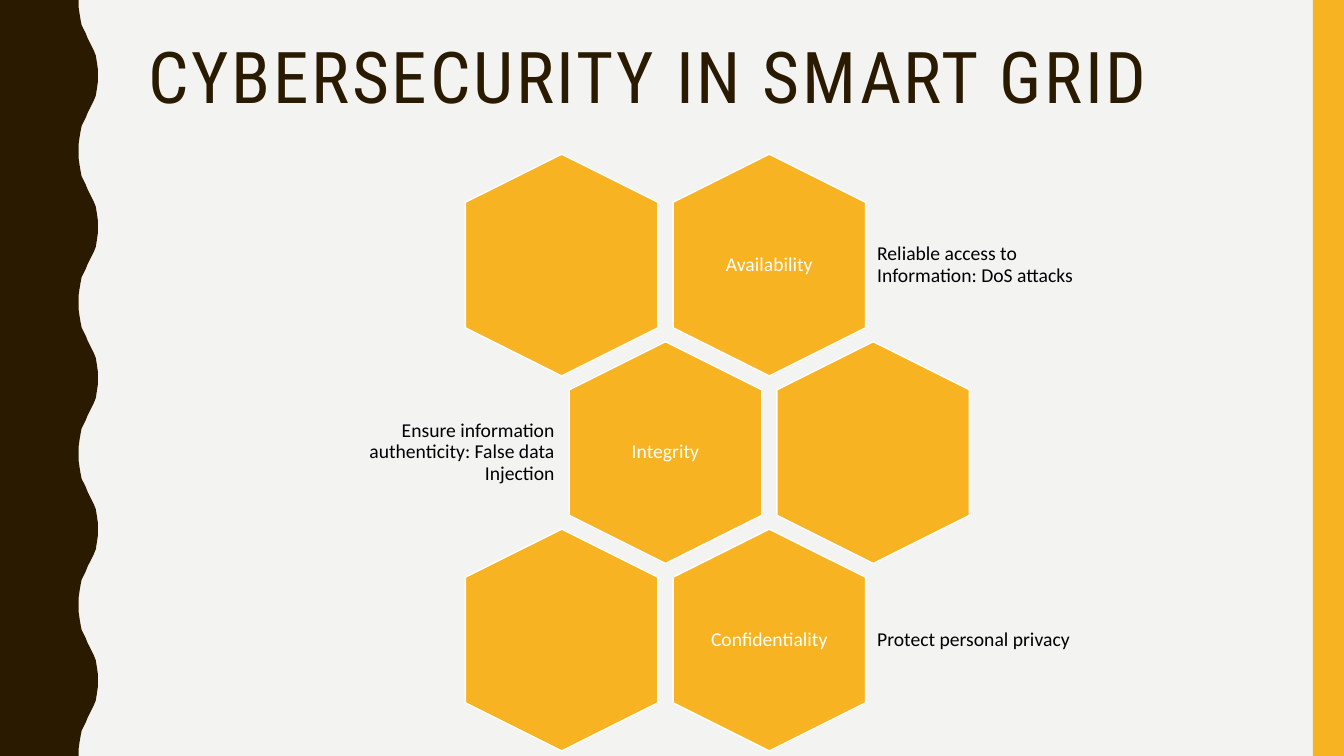
from pptx import Presentation
from pptx.dml.color import RGBColor
from pptx.enum.shapes import MSO_SHAPE
from pptx.enum.text import MSO_ANCHOR, PP_ALIGN
from pptx.util import Inches, Pt

HEXAGON, RECTANGLE = MSO_SHAPE.HEXAGON, MSO_SHAPE.RECTANGLE
TOP, MIDDLE = MSO_ANCHOR.TOP, MSO_ANCHOR.MIDDLE
LEFT, CENTER, RIGHT = PP_ALIGN.LEFT, PP_ALIGN.CENTER, PP_ALIGN.RIGHT

SLIDE_W, SLIDE_H = 13.33, 7.5
BROWN, AMBER, WHITE, BLACK, PAPER = "2A1A00", "F8B323", "FFFFFF", "000000", "F3F3F2"

WAVE_PERIOD = 1.5
WAVE_RISE = [
    (0.78, 0), (0.78, 0.07), (0.79, 0.14), (0.8, 0.2), (0.81, 0.25),
    (0.83, 0.29), (0.85, 0.33), (0.87, 0.38), (0.89, 0.42), (0.91, 0.46),
    (0.93, 0.5), (0.95, 0.55), (0.96, 0.61), (0.97, 0.68),
]

HEX_LENGTH, HEX_WIDTH = 2.2, 1.91
FIRST_X, FIRST_Y = 5.57, 2.63
COLUMN_STEP, ROW_STEP = 2.06, 1.86
LABEL_W, LABEL_H, DETAIL_H = 1.31, 1.51, 1.32

GOALS = [
    ("Availability", 1, "Reliable access to Information: DoS attacks", 8.64, 2.45, LEFT),
    ("Integrity", 0, "Ensure information authenticity: False data Injection", 3.19, 2.37, RIGHT),
    ("Confidentiality", 1, "Protect personal privacy", 8.64, 2.45, LEFT),
]


def rgb(value):
    """Turn a hex string into a colour."""
    return RGBColor.from_string(value)


class SlideBuilder:
    """Holds the text style and the slide being drawn."""

    def __init__(self, slide, font="Calibri", size=14):
        """Keep the slide and its default font."""
        self.slide, self.font, self.size = slide, font, size

    def background(self, color):
        """Fill the slide background."""
        fill = self.slide.background.fill
        fill.solid()
        fill.fore_color.rgb = rgb(color)

    def paint(self, shape, fill, line=None):
        """Give a shape its fill and outline."""
        shape.shadow.inherit = False
        shape.fill.solid()
        shape.fill.fore_color.rgb = rgb(fill)
        if line:
            shape.line.color.rgb = rgb(line)
            shape.line.width = Pt(1)
        else:
            shape.line.fill.background()

    def bar(self, x, y, w, h, fill):
        """Draw a plain rectangle."""
        bar = self.slide.shapes.add_shape(RECTANGLE, Inches(x), Inches(y), Inches(w), Inches(h))
        self.paint(bar, fill)

    def hexagon(self, cx, cy):
        """Draw an upright hexagon around a centre."""
        cell = self.slide.shapes.add_shape(
            HEXAGON, Inches(cx - HEX_LENGTH / 2), Inches(cy - HEX_WIDTH / 2),
            Inches(HEX_LENGTH), Inches(HEX_WIDTH))
        cell.rotation = 90
        cell.adjustments[0] = 0.25
        self.paint(cell, AMBER, WHITE)

    def outline(self, points, fill):
        """Draw a closed freeform through points in inches."""
        corners = [(Inches(x), Inches(y)) for x, y in points]
        builder = self.slide.shapes.build_freeform(*corners[0])
        builder.add_line_segments(corners[1:], close=True)
        self.paint(builder.convert_to_shape(), fill)

    def text(self, text, x, y, w, h, color=BLACK, align=LEFT, anchor=MIDDLE,
             font=None, size=None, margins=(0.06, 0.06), tracking=0):
        """Write one paragraph in a text box."""
        frame = self.slide.shapes.add_textbox(
            Inches(x), Inches(y), Inches(w), Inches(h)).text_frame
        frame.word_wrap = True
        frame.vertical_anchor = anchor
        frame.margin_left = frame.margin_right = Inches(margins[0])
        frame.margin_top = frame.margin_bottom = Inches(margins[1])
        paragraph = frame.paragraphs[0]
        paragraph.alignment = align
        paragraph.line_spacing = 0.9
        run = paragraph.add_run()
        run.text = text
        run.font.name = font or self.font
        run.font.size = Pt(size or self.size)
        run.font.color.rgb = rgb(color)
        if tracking:
            run.font._element.set("spc", str(tracking * 100))


def wave_edge():
    """List the points of the wavy band."""
    fall = [(x, WAVE_PERIOD - y) for x, y in reversed(WAVE_RISE)]
    period = WAVE_RISE + [(0.97, WAVE_PERIOD / 2)] + fall[:-1]
    waves = [(x, y + n * WAVE_PERIOD) for n in range(5) for x, y in period]
    return [(0, 0)] + waves + [(0.78, SLIDE_H), (0, SLIDE_H)]


def main():
    """Build and save the slide."""
    deck = Presentation()
    deck.slide_width, deck.slide_height = Inches(SLIDE_W), Inches(SLIDE_H)
    page = SlideBuilder(deck.slides.add_slide(deck.slide_layouts[6]))
    page.background(PAPER)
    page.outline(wave_edge(), BROWN)
    page.bar(13.02, 0, 0.31, SLIDE_H, AMBER)
    page.text("CYBERSECURITY IN SMART GRID", 1.37, 0.42, 11.13, 1.63, color=BROWN,
              anchor=TOP, font="Roboto Condensed", size=51, margins=(0.1, 0), tracking=2)

    for row, (goal, goal_column, detail, detail_x, detail_w, align) in enumerate(GOALS):
        cy = FIRST_Y + row * ROW_STEP
        row_x = FIRST_X + row % 2 * COLUMN_STEP / 2
        for column in range(2):
            page.hexagon(row_x + column * COLUMN_STEP, cy)
        goal_x = row_x + goal_column * COLUMN_STEP
        page.text(goal, goal_x - LABEL_W / 2, cy - LABEL_H / 2, LABEL_W, LABEL_H,
                  color=WHITE, align=CENTER)
        page.text(detail, detail_x, cy - DETAIL_H / 2, detail_w, DETAIL_H, align=align)

    deck.save("out.pptx")


if __name__ == "__main__":
    main()
